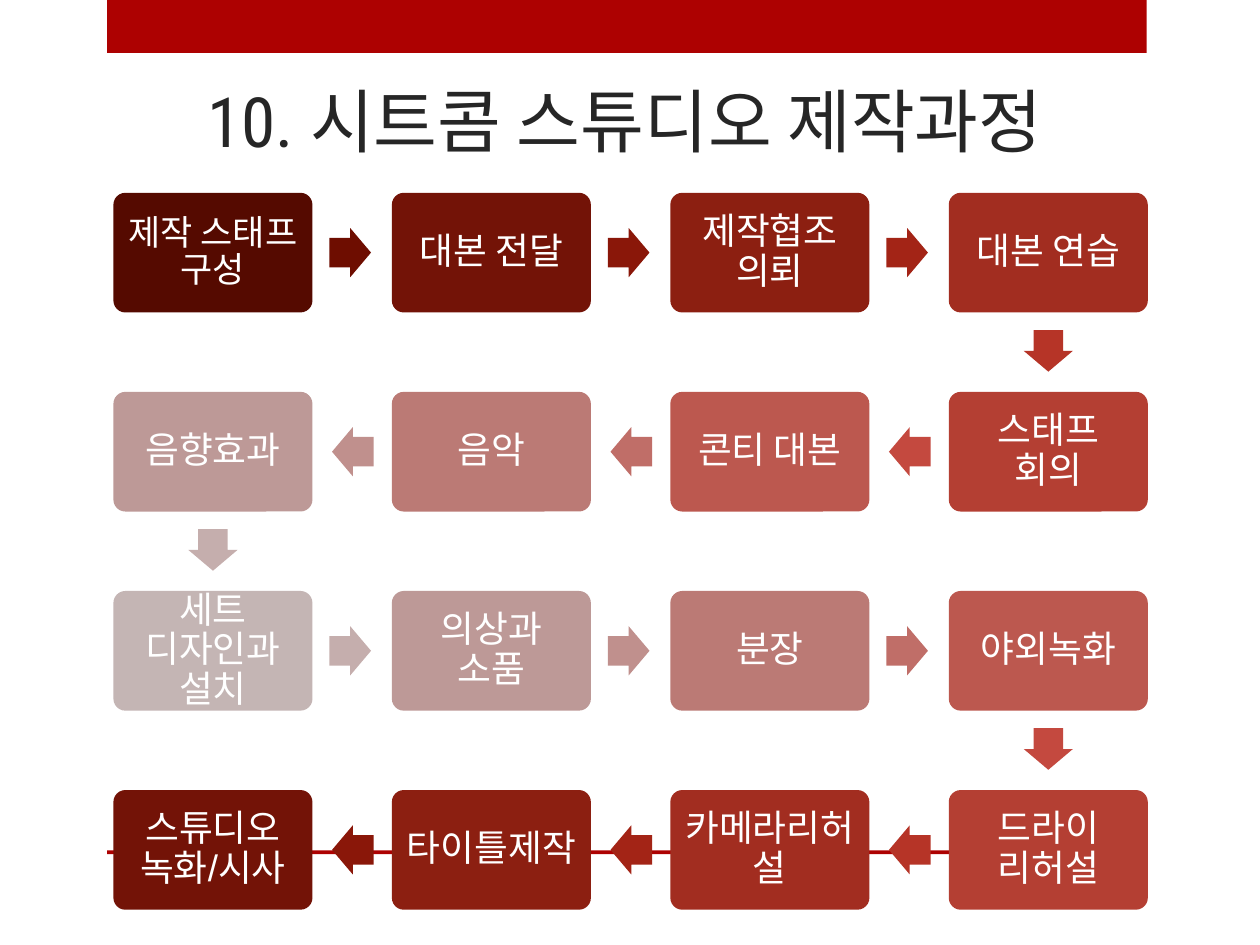
from pptx import Presentation
from pptx.dml.color import RGBColor
from pptx.enum.shapes import MSO_SHAPE
from pptx.enum.text import MSO_ANCHOR, PP_ALIGN
from pptx.util import Inches, Pt

RECTANGLE = MSO_SHAPE.RECTANGLE
ROUNDED = MSO_SHAPE.ROUNDED_RECTANGLE
ARROW = MSO_SHAPE.RIGHT_ARROW
MIDDLE, BOTTOM = MSO_ANCHOR.MIDDLE, MSO_ANCHOR.BOTTOM
CENTER = PP_ALIGN.CENTER

RED = RGBColor(0xAD, 0x01, 0x01)
DARK = RGBColor(0x26, 0x26, 0x26)
WHITE = RGBColor(0xFF, 0xFF, 0xFF)
STEP_COLORS = [RGBColor.from_string(code) for code in (
    "550A00", "731307", "8C1F11", "A22D20", "B43F33",
    "BC584F", "BB7A75", "BD9997", "C4B5B4")]
ARROW_COLORS = [RGBColor.from_string(code) for code in (
    "6E0D00", "8A1709", "A32416", "B63427",
    "C4493F", "C06E68", "C0908D", "C5AEAD")]

TITLE = "10. 시트콤 스튜디오 제작과정"
STEPS = [
    "제작 스태프 구성", "대본 전달", "제작협조 의뢰", "대본 연습",
    "스태프 회의", "콘티 대본", "음악", "음향효과",
    "세트 디자인과 설치", "의상과 소품", "분장", "야외녹화",
    "드라이 리허설", "카메라리허설", "타이틀제작", "스튜디오 녹화/시사",
]
COLUMNS = 4
STEP_W, STEP_H = 1.58, 0.95
PITCH_X, PITCH_Y = 2.21, 1.58
ARROW_W, ARROW_H = 0.33, 0.39
RIGHT, DOWN, LEFT = 0, 90, 180
ARROW_OFFSETS = {RIGHT: (1.09, 0), DOWN: (0, 0.78), LEFT: (-1.1, 0)}


def add_filled(slide, preset, left, top, width, height, color):
    """Add a flat preset shape without outline or shadow."""
    shape = slide.shapes.add_shape(
        preset, Inches(left), Inches(top), Inches(width), Inches(height))
    shape.shadow.inherit = False
    shape.fill.solid()
    shape.fill.fore_color.rgb = color
    shape.line.fill.background()
    return shape


def write_centered(frame, text, font_name, size, color, anchor):
    """Write one centred, wrapping paragraph into a text frame."""
    frame.word_wrap = True
    frame.vertical_anchor = anchor
    frame.text = text
    paragraph = frame.paragraphs[0]
    paragraph.alignment = CENTER
    font = paragraph.runs[0].font
    font.name, font.size, font.color.rgb = font_name, Pt(size), color
    return paragraph


def add_bands(slide, left, width):
    """Draw the thick top band and the thin rule near the bottom."""
    add_filled(slide, RECTANGLE, left, 0, width, 0.42, RED)
    add_filled(slide, RECTANGLE, left, 6.75, width, 0.03, RED)


def add_title(slide, left, top, width, height):
    """Place the slide title, sitting on the bottom of its box."""
    title = slide.shapes.add_textbox(
        Inches(left), Inches(top), Inches(width), Inches(height))
    write_centered(title.text_frame, TITLE, "Roboto Condensed", 39.6, DARK, BOTTOM)


def add_step(slide, left, top, text, size, color):
    """Draw one process step with its label."""
    step = add_filled(slide, ROUNDED, left, top, STEP_W, STEP_H, color)
    step.adjustments[0] = 0.1
    frame = step.text_frame
    inset = Inches(0.08 if size == 20 else 0.09)
    frame.margin_left = frame.margin_right = inset
    frame.margin_top = frame.margin_bottom = inset
    label = write_centered(frame, text, "Arial", size, WHITE, MIDDLE)
    label.line_spacing = 0.9


def add_arrow(slide, step_left, step_top, direction, color):
    """Draw the arrow that leaves a step in the given direction."""
    dx, dy = ARROW_OFFSETS[direction]
    arrow = add_filled(
        slide, ARROW,
        step_left + (STEP_W - ARROW_W) / 2 + dx,
        step_top + (STEP_H - ARROW_H) / 2 + dy,
        ARROW_W, ARROW_H, color)
    arrow.adjustments[0] = 0.6
    arrow.adjustments[1] = 0.5
    arrow.rotation = direction


def add_process(slide, left, top):
    """Lay the steps out in a snake that turns at the end of each row."""
    middle = len(STEPS) // 2
    last = len(STEPS) - 1
    for index, text in enumerate(STEPS):
        row, place = divmod(index, COLUMNS)
        forward = row % 2 == 0
        column = place if forward else COLUMNS - 1 - place
        x, y = left + column * PITCH_X, top + row * PITCH_Y
        size = 20 if index == 0 else 21
        add_step(slide, x, y, text, size, STEP_COLORS[middle - abs(index - middle)])
        if index < last:
            turn = place == COLUMNS - 1
            direction = DOWN if turn else RIGHT if forward else LEFT
            add_arrow(slide, x, y, direction, ARROW_COLORS[min(index, last - index)])


def main():
    """Build the slide and save it."""
    presentation = Presentation()
    presentation.slide_width = Inches(10)
    presentation.slide_height = Inches(7.5)
    slide = presentation.slides.add_slide(presentation.slide_layouts[6])
    add_bands(slide, 0.85, 8.25)
    add_title(slide, 0.83, 0.52, 8.26, 0.81)
    add_process(slide, 0.9, 1.53)
    presentation.save("out.pptx")


if __name__ == "__main__":
    main()
